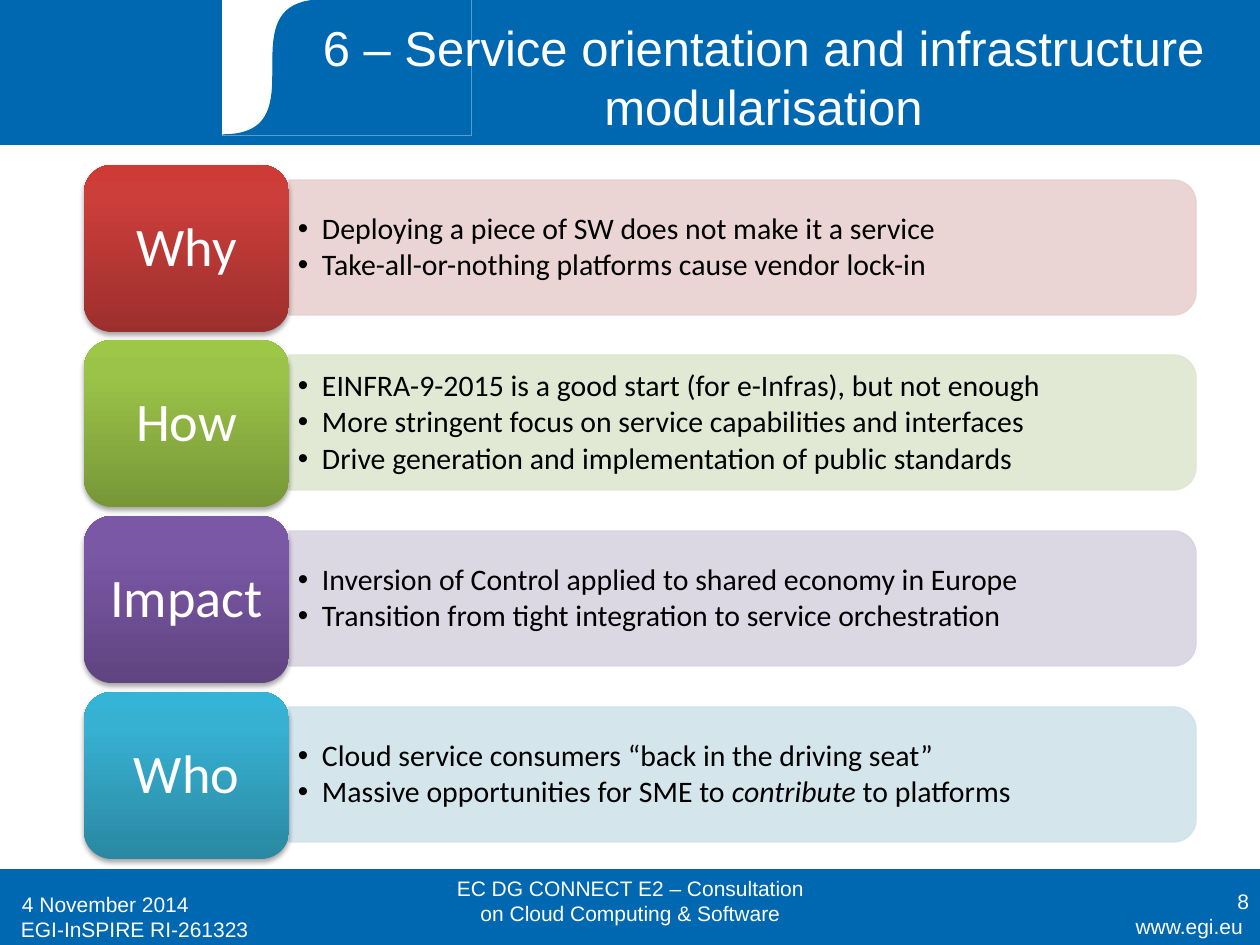
import copy
import dataclasses

import lxml.etree
import pptx
import pptx.dml.color
import pptx.enum.shapes
import pptx.enum.text
import pptx.oxml.ns
import pptx.util

SHAPE = pptx.enum.shapes.MSO_SHAPE
ALIGN = pptx.enum.text.PP_ALIGN
ANCHOR = pptx.enum.text.MSO_ANCHOR
qn = pptx.oxml.ns.qn


@dataclasses.dataclass(frozen=True)
class Theme:
    blue: str = "0067B1"
    white: str = "FFFFFF"
    black: str = "000000"
    heading_font: str = "Arial"
    content_font: str = "Calibri"
    title_size: int = 28
    label_size: int = 31
    list_size: int = 17
    footer_size: int = 12


@dataclasses.dataclass(frozen=True)
class Topic:
    label: str
    points: tuple
    tint: str
    gradient: tuple
    emphasis: str = ""


THEME = Theme()
EMU_PER_PIXEL = 914400 / 126
TOPICS = [
    Topic("Why",
          ("Deploying a piece of SW does not make it a service",
           "Take-all-or-nothing platforms cause vendor lock-in"),
          "E8D0D0", ("9C2F2D", "CB3E3A", "CE3B37")),
    Topic("How",
          ("EINFRA-9-2015 is a good start (for e-Infras), but not enough",
           "More stringent focus on service capabilities and interfaces",
           "Drive generation and implementation of public standards"),
          "DEE7D1", ("779737", "9BC348", "9DC746")),
    Topic("Impact",
          ("Inversion of Control applied to shared economy in Europe",
           "Transition from tight integration to service orchestration"),
          "D8D3E0", ("5F4480", "7B58A6", "7C57A8")),
    Topic("Who",
          ("Cloud service consumers “back in the driving seat”",
           "Massive opportunities for SME to contribute to platforms"),
          "D0E3EA", ("2A88A2", "37B1D2", "34B4D6"), "contribute"),
]


def px(value):
    return round(value * EMU_PER_PIXEL)


def rgb(value):
    return pptx.dml.color.RGBColor.from_string(value)


def paint(shape, color):
    shape.shadow.inherit = False
    shape.fill.solid()
    shape.fill.fore_color.rgb = rgb(color)
    shape.line.color.rgb = rgb(color)
    shape.line.width = pptx.util.Pt(0.75)


def add_box(slide, kind, box, color):
    shape = slide.shapes.add_shape(kind, *map(px, box))
    paint(shape, color)
    return shape


def set_frame(shape, anchor, insets):
    frame = shape.text_frame
    frame.word_wrap = True
    frame.auto_size = pptx.enum.text.MSO_AUTO_SIZE.NONE
    frame.vertical_anchor = anchor
    frame.margin_left = frame.margin_right = px(insets[0])
    frame.margin_top = frame.margin_bottom = px(insets[1])
    return frame


def style_runs(paragraph, font, size, color):
    for run in paragraph.runs:
        run.font.name = font
        run.font.size = pptx.util.Pt(size)
        run.font.bold = False
        run.font.color.rgb = rgb(color)


def place_placeholder(slide, placeholder, box):
    placeholder.left, placeholder.top, placeholder.width, placeholder.height = map(px, box)
    slide.shapes._spTree.append(placeholder._element)


def add_banner(slide):
    add_box(slide, SHAPE.RECTANGLE, (0, 0, 1260, 144), THEME.blue)
    add_box(slide, SHAPE.RECTANGLE, (223, 0, 248, 135), THEME.white)
    left, handle, right, bottom, steps = 223, 323, 471, 135, 40
    curve = []
    for step in range(1, steps + 1):
        t = step / steps
        u = 1 - t
        x = left * (u ** 3 + 3 * u * t ** 2) + handle * (3 * u ** 2 * t + t ** 3)
        y = bottom * (u ** 3 + 3 * u ** 2 * t)
        curve.append((px(x), px(y)))
    builder = slide.shapes.build_freeform(px(right), 0)
    builder.add_line_segments([(px(right), px(bottom)), (px(left), px(bottom))] + curve)
    paint(builder.convert_to_shape(), THEME.blue)


def add_title(slide, text):
    title = slide.shapes.title
    place_placeholder(slide, title, (292, 16, 943, 120))
    frame = set_frame(title, ANCHOR.MIDDLE, (13, 6))
    frame.text = text
    frame.paragraphs[0].alignment = ALIGN.CENTER
    style_runs(frame.paragraphs[0], THEME.heading_font, THEME.title_size, THEME.white)


def add_footer_text(slide, text, box, alignment):
    shape = slide.shapes.add_textbox(*map(px, box))
    frame = set_frame(shape, ANCHOR.MIDDLE, (13, 6))
    frame.text = text
    frame.paragraphs[0].alignment = alignment
    style_runs(frame.paragraphs[0], THEME.heading_font, THEME.footer_size, THEME.white)


def add_panel(slide, top, tint):
    width, height = 907, 135
    left = 289 + (width - height) // 2
    panel = add_box(slide, SHAPE.ROUND_2_SAME_RECTANGLE,
                    (left, top - (width - height) // 2, height, width), tint)
    panel.rotation = 90
    for color in panel._element.spPr.iter(qn("a:srgbClr")):
        lxml.etree.SubElement(color, qn("a:alpha"), val="90000")


def set_gradient(shape, colors):
    shape.fill.gradient()
    shape.fill.gradient_angle = 90
    stop_list = shape._element.spPr.find(qn("a:gradFill")).find(qn("a:gsLst"))
    stop_list.append(copy.deepcopy(stop_list[-1]))
    for stop, color, position in zip(shape.fill.gradient_stops, colors, (0, 0.8, 1)):
        stop.color.rgb = rgb(color)
        stop.position = position


def add_soft_shadow(shape):
    effects = shape._element.spPr.find(qn("a:effectLst"))
    shadow = lxml.etree.SubElement(effects, qn("a:outerShdw"), blurRad="39370",
                                   dist="22860", dir="5400000", rotWithShape="0")
    color = lxml.etree.SubElement(shadow, qn("a:srgbClr"), val=THEME.black)
    lxml.etree.SubElement(color, qn("a:alpha"), val="35000")


def add_tile(slide, top, topic):
    tile = add_box(slide, SHAPE.ROUNDED_RECTANGLE, (84, top, 205, 167), topic.gradient[0])
    tile.line.fill.background()
    set_gradient(tile, topic.gradient)
    add_soft_shadow(tile)
    frame = set_frame(tile, ANCHOR.MIDDLE, (16, 8))
    frame.text = topic.label
    paragraph = frame.paragraphs[0]
    paragraph.alignment = ALIGN.CENTER
    paragraph.line_spacing = 0.9
    style_runs(paragraph, THEME.content_font, THEME.label_size, THEME.white)


def write_point(paragraph, text, emphasis):
    before, found, after = text.partition(emphasis) if emphasis else (text, "", "")
    paragraph.text = before
    if found:
        run = paragraph.add_run()
        run.text = found
        run.font.italic = True
        paragraph.add_run().text = after
    paragraph.level = 1
    paragraph.alignment = ALIGN.LEFT
    paragraph.line_spacing = 0.9
    paragraph.space_before = pptx.util.Pt(0)
    paragraph.space_after = pptx.util.Pt(2.5)
    properties = paragraph._p.get_or_add_pPr()
    properties.set("marL", str(px(24)))
    properties.set("indent", str(-px(24)))
    lxml.etree.SubElement(properties, qn("a:buFont"), typeface=THEME.heading_font)
    lxml.etree.SubElement(properties, qn("a:buChar"), char="•")
    style_runs(paragraph, THEME.content_font, THEME.list_size, THEME.black)


def fill_list(slide, placeholder, top, topic):
    place_placeholder(slide, placeholder, (289, top, 901, 122))
    frame = set_frame(placeholder, ANCHOR.MIDDLE, (9, 5))
    for index, point in enumerate(topic.points):
        paragraph = frame.add_paragraph() if index else frame.paragraphs[0]
        write_point(paragraph, point, topic.emphasis)


def main():
    presentation = pptx.Presentation()
    presentation.slide_width, presentation.slide_height = px(1260), px(945)
    slide = presentation.slides.add_slide(presentation.slide_layouts.get_by_name("Comparison"))
    bodies = list(slide.placeholders)[1:]
    add_box(slide, SHAPE.RECTANGLE, (0, 870, 1260, 75), THEME.blue)
    add_banner(slide)
    add_title(slide, "6 – Service orientation and infrastructure modularisation")
    for text, box, alignment in (
        ("www.egi.eu", (1057, 907, 199, 39), ALIGN.RIGHT),
        ("EGI-InSPIRE RI-261323", (8, 910, 315, 39), ALIGN.LEFT),
        ("4 November 2014", (9, 879, 294, 50), ALIGN.LEFT),
        ("EC DG CONNECT E2 – Consultation on Cloud Computing & Software",
         (431, 876, 399, 50), ALIGN.CENTER),
        ("8", (968, 876, 294, 50), ALIGN.RIGHT),
    ):
        add_footer_text(slide, text, box, alignment)
    for index, (topic, body) in enumerate(zip(TOPICS, bodies)):
        top = 180 + 527 * index // 3
        add_panel(slide, top, topic.tint)
        fill_list(slide, body, top + 7, topic)
        add_tile(slide, top - 15, topic)
    presentation.save("out.pptx")


if __name__ == "__main__":
    main()
